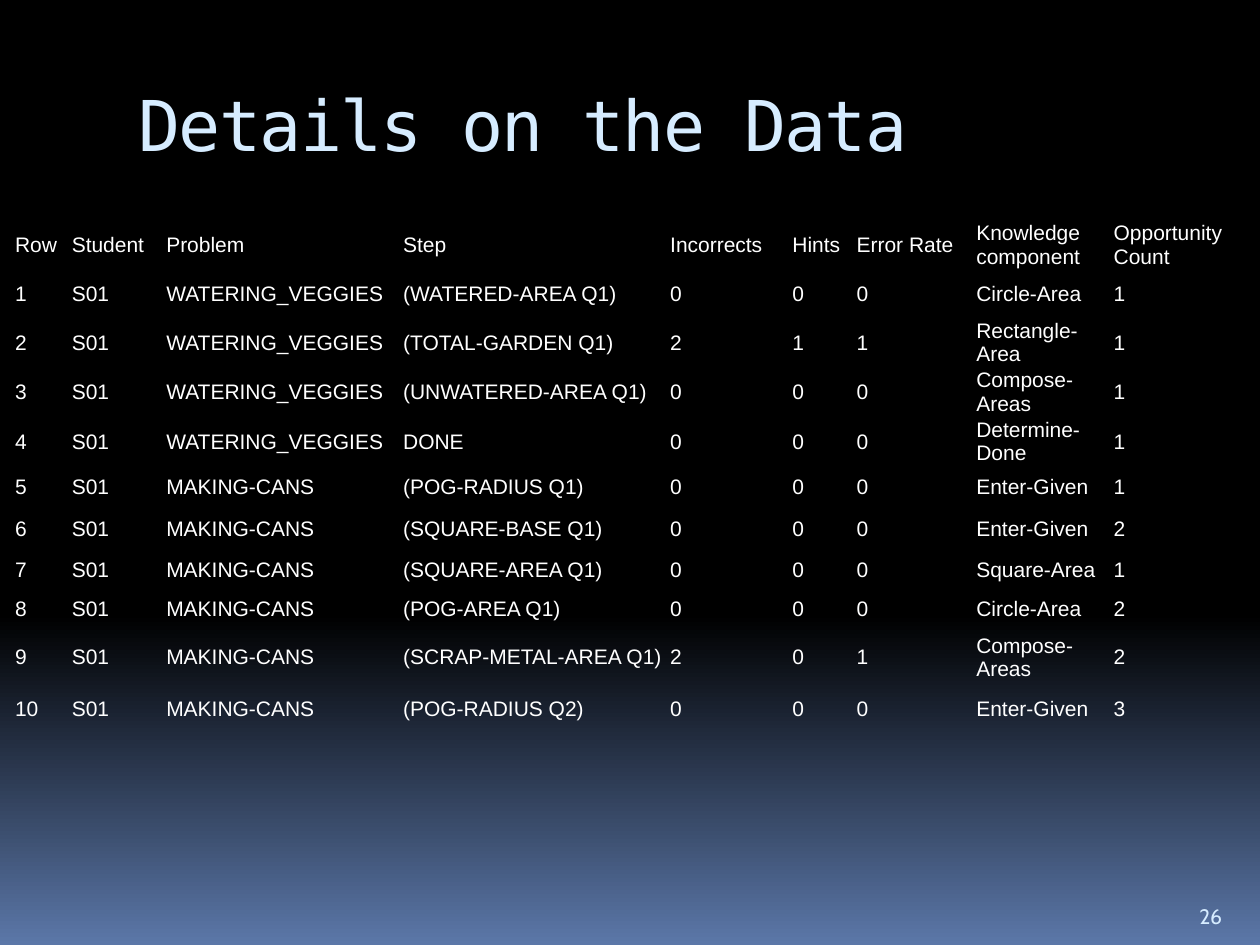
from copy import deepcopy
from dataclasses import astuple, dataclass

from pptx import Presentation
from pptx.dml.color import RGBColor
from pptx.enum.text import MSO_ANCHOR, PP_ALIGN
from pptx.oxml.ns import qn
from pptx.slide import Slide
from pptx.text.text import TextFrame
from pptx.util import Inches, Pt

COLORS = {"night": "000000", "dusk": "5B77A8", "pale": "D6ECFF", "white": "FFFFFF"}
NO_GRID_STYLE = "{2D5ABB26-0587-4C30-8999-92F81FD0307C}"
COLUMN_WIDTHS = [0.45, 0.75, 1.88, 2.12, 0.97, 0.51, 0.95, 1.09, 1.09]
ROW_HEIGHTS = [0.38] * 4 + [0.33] * 4 + [0.28, 0.49, 0.33]
HEADINGS = ("Row", "Student", "Problem", "Step", "Incorrects", "Hints",
            "Error Rate", "Knowledge component", "Opportunity Count")


@dataclass
class Attempt:
    problem: str
    step: str
    incorrects: int
    hints: int
    error_rate: int
    component: str
    opportunity: int


GARDEN, CANS = "WATERING_VEGGIES", "MAKING-CANS"
ATTEMPTS = [
    Attempt(GARDEN, "(WATERED-AREA Q1)", 0, 0, 0, "Circle-Area", 1),
    Attempt(GARDEN, "(TOTAL-GARDEN Q1)", 2, 1, 1, "Rectangle-Area", 1),
    Attempt(GARDEN, "(UNWATERED-AREA Q1)", 0, 0, 0, "Compose-Areas", 1),
    Attempt(GARDEN, "DONE", 0, 0, 0, "Determine-Done", 1),
    Attempt(CANS, "(POG-RADIUS Q1)", 0, 0, 0, "Enter-Given", 1),
    Attempt(CANS, "(SQUARE-BASE Q1)", 0, 0, 0, "Enter-Given", 2),
    Attempt(CANS, "(SQUARE-AREA Q1)", 0, 0, 0, "Square-Area", 1),
    Attempt(CANS, "(POG-AREA Q1)", 0, 0, 0, "Circle-Area", 2),
    Attempt(CANS, "(SCRAP-METAL-AREA Q1)", 2, 0, 1, "Compose-Areas", 2),
    Attempt(CANS, "(POG-RADIUS Q2)", 0, 0, 0, "Enter-Given", 3),
]


def write_text(frame: TextFrame, text: str, *, font: str = "Arial", size: float = 12,
               color: str = "white", spacing: float = 0) -> None:
    frame.word_wrap = True
    paragraph = frame.paragraphs[0]
    paragraph.alignment = PP_ALIGN.LEFT
    span = paragraph.add_run()
    span.text = text
    span.font.name = font
    span.font.size = Pt(size)
    span.font.color.rgb = RGBColor.from_string(COLORS[color])
    if spacing:
        span.font._element.set("spc", str(round(spacing * 100)))


def paint_background(page: Slide) -> None:
    fill = page.background.fill
    fill.gradient()
    fill.gradient_angle = 270
    for stop, position, color in zip(fill.gradient_stops, (0.65, 1), ("night", "dusk")):
        stop.position = position
        stop.color.rgb = RGBColor.from_string(COLORS[color])
    stop_list = page.element.find(".//" + qn("a:gsLst"))
    first_stop = deepcopy(stop_list[0])
    first_stop.set("pos", "0")
    stop_list.insert(0, first_stop)


def add_title(page: Slide, text: str) -> None:
    title = page.shapes.title
    title.left, title.top = Inches(1), Inches(0.56)
    title.width, title.height = Inches(8.5), Inches(1)
    frame = title.text_frame
    frame.vertical_anchor = MSO_ANCHOR.TOP
    frame.margin_top = Inches(0.09)
    write_text(frame, text, font="DejaVu Sans Mono", size=40, color="pale", spacing=-1)


def add_attempt_table(page: Slide, attempts: list[Attempt]) -> None:
    records = [HEADINGS] + [(number, "S01", *astuple(attempt))
                            for number, attempt in enumerate(attempts, 1)]
    frame = page.shapes.add_table(len(records), len(HEADINGS), Inches(0.1), Inches(1.75),
                                  Inches(sum(COLUMN_WIDTHS)), Inches(sum(ROW_HEIGHTS)))
    table = frame.table
    table.first_row = table.horz_banding = False
    frame.element.find(".//" + qn("a:tableStyleId")).text = NO_GRID_STYLE
    for column, width in zip(table.columns, COLUMN_WIDTHS):
        column.width = Inches(width)
    for row, height, record in zip(table.rows, ROW_HEIGHTS, records):
        row.height = Inches(height)
        for cell, value in zip(row.cells, record):
            cell.fill.background()
            cell.vertical_anchor = MSO_ANCHOR.MIDDLE
            cell.margin_left = cell.margin_right = Inches(0.02)
            cell.margin_top = cell.margin_bottom = Inches(0.01)
            write_text(cell.text_frame, str(value))


def add_page_number(page: Slide, text: str) -> None:
    box = page.shapes.add_textbox(Inches(9.42), Inches(7.02), Inches(0.5), Inches(0.4))
    box.text_frame.vertical_anchor = MSO_ANCHOR.BOTTOM
    write_text(box.text_frame, text, font="Cabin", color="pale")


def main() -> None:
    deck = Presentation()
    deck.slide_width, deck.slide_height = Inches(10), Inches(7.5)
    page = deck.slides.add_slide(deck.slide_layouts[5])
    paint_background(page)
    add_title(page, "Details on the Data")
    add_attempt_table(page, ATTEMPTS)
    add_page_number(page, "26")
    deck.save("out.pptx")


if __name__ == "__main__":
    main()
